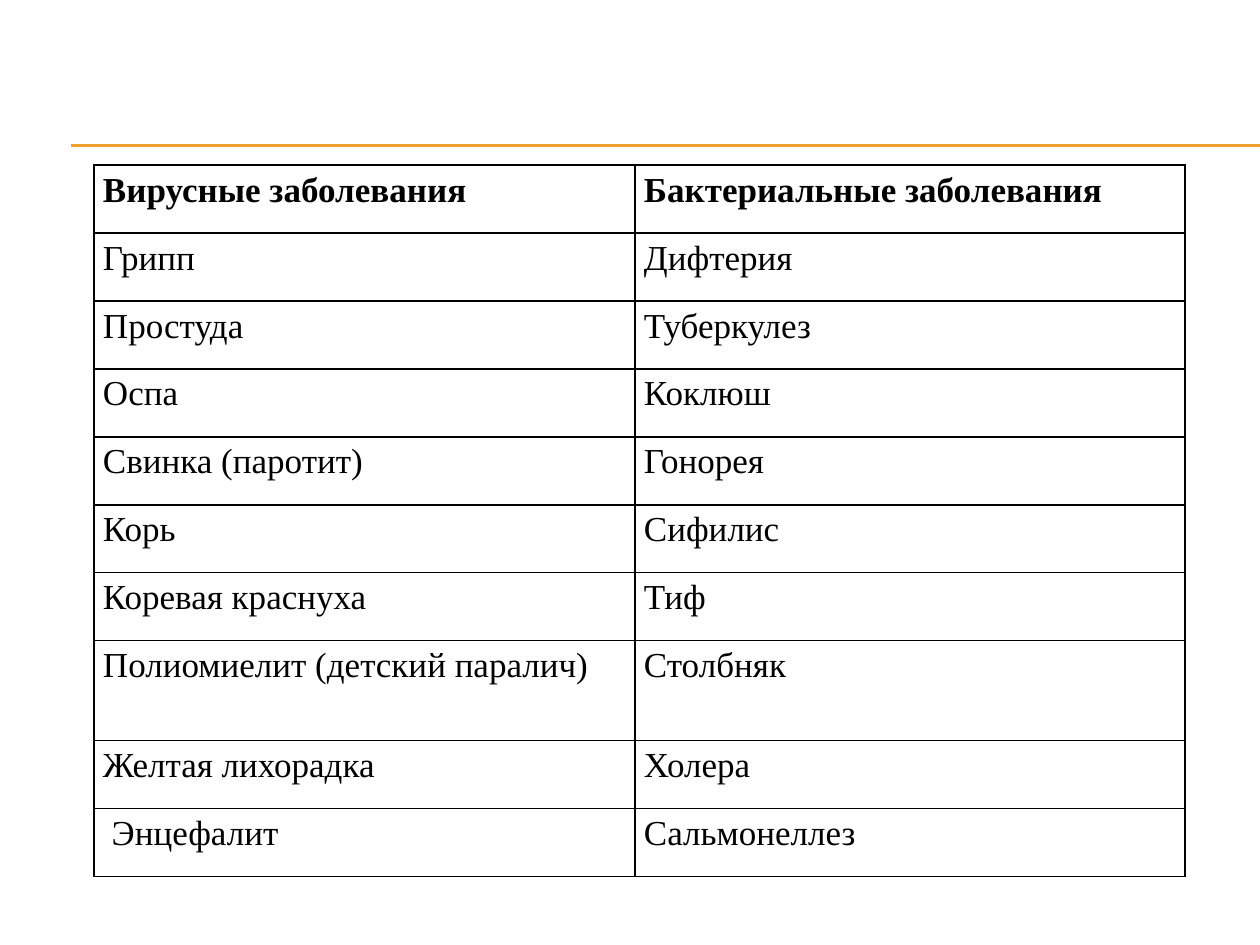
import dataclasses

import lxml.etree
import pptx
import pptx.dml.color
import pptx.enum.shapes
import pptx.enum.text
import pptx.oxml.ns
import pptx.util

PX_PER_INCH = 126
SLIDE_W, SLIDE_H = 1260, 945

DISEASES = [
    ("Вирусные заболевания", "Бактериальные заболевания"),
    ("Грипп", "Дифтерия"),
    ("Простуда", "Туберкулез"),
    ("Оспа", "Коклюш"),
    ("Свинка (паротит)", "Гонорея"),
    ("Корь", "Сифилис"),
    ("Коревая краснуха", "Тиф"),
    ("Полиомиелит (детский паралич)", "Столбняк"),
    ("Желтая лихорадка", "Холера"),
    (" Энцефалит", "Сальмонеллез"),
]
TALL_ROW = 7


@dataclasses.dataclass(frozen=True)
class Theme:
    font: str = "Times New Roman"
    size: int = 20
    text: str = "000000"
    border: str = "000000"
    border_pt: float = 1
    accent: str = "F0A22E"
    accent_pt: float = 0.75


THEME = Theme()


def px(n):
    return pptx.util.Emu(round(n * pptx.util.Inches(1) / PX_PER_INCH))


def rgb(value):
    return pptx.dml.color.RGBColor.from_string(value)


def add_rule(slide, x, y, w):
    """Draw the double accent line, one px apart, from x across w."""
    for line_y in (y, y + 1):
        line = slide.shapes.add_connector(
            pptx.enum.shapes.MSO_CONNECTOR.STRAIGHT,
            px(x), px(line_y), px(x + w), px(line_y))
        line.line.color.rgb = rgb(THEME.accent)
        line.line.width = pptx.util.Pt(THEME.accent_pt)
        lxml.etree.SubElement(line._element.spPr, pptx.oxml.ns.qn("a:effectLst"))


def set_borders(cell):
    """Outline the cell; call before its fill, since borders come first in tcPr."""
    qn = pptx.oxml.ns.qn
    tc_pr = cell._tc.get_or_add_tcPr()
    for side in ("a:lnL", "a:lnR", "a:lnT", "a:lnB"):
        ln = lxml.etree.SubElement(
            tc_pr, qn(side), w=str(pptx.util.Pt(THEME.border_pt)))
        fill = lxml.etree.SubElement(ln, qn("a:solidFill"))
        lxml.etree.SubElement(fill, qn("a:srgbClr"), val=THEME.border)


def fill_cell(cell, text, bold):
    set_borders(cell)
    cell.fill.background()
    cell.margin_left = cell.margin_right = px(9)
    cell.margin_top = cell.margin_bottom = 0
    p = cell.text_frame.paragraphs[0]
    p.alignment = pptx.enum.text.PP_ALIGN.JUSTIFY
    p.line_spacing = 1.15
    r = p.add_run()
    r.text = text
    r.font.name = THEME.font
    r.font.size = pptx.util.Pt(THEME.size)
    r.font.bold = bold
    r.font.color.rgb = rgb(THEME.text)


def add_disease_table(slide, x, y, w, h):
    tall = 100
    row_h = (h - tall) // (len(DISEASES) - 1)
    left_w = 541
    table = slide.shapes.add_table(
        len(DISEASES), 2, px(x), px(y), px(w), px(h)).table
    table.horz_banding = False
    for column, width in zip(table.columns, (left_w, w - left_w)):
        column.width = px(width)
    for i, names in enumerate(DISEASES):
        table.rows[i].height = px(tall if i == TALL_ROW else row_h)
        for j, name in enumerate(names):
            fill_cell(table.cell(i, j), name, bold=i == 0)


def main():
    prs = pptx.Presentation()
    prs.slide_width, prs.slide_height = px(SLIDE_W), px(SLIDE_H)
    slide = prs.slides.add_slide(prs.slide_layouts[6])
    add_rule(slide, 71, 145, SLIDE_W - 71)
    add_disease_table(slide, 94, 165, 1091, 712)
    prs.save("out.pptx")


if __name__ == "__main__":
    main()
